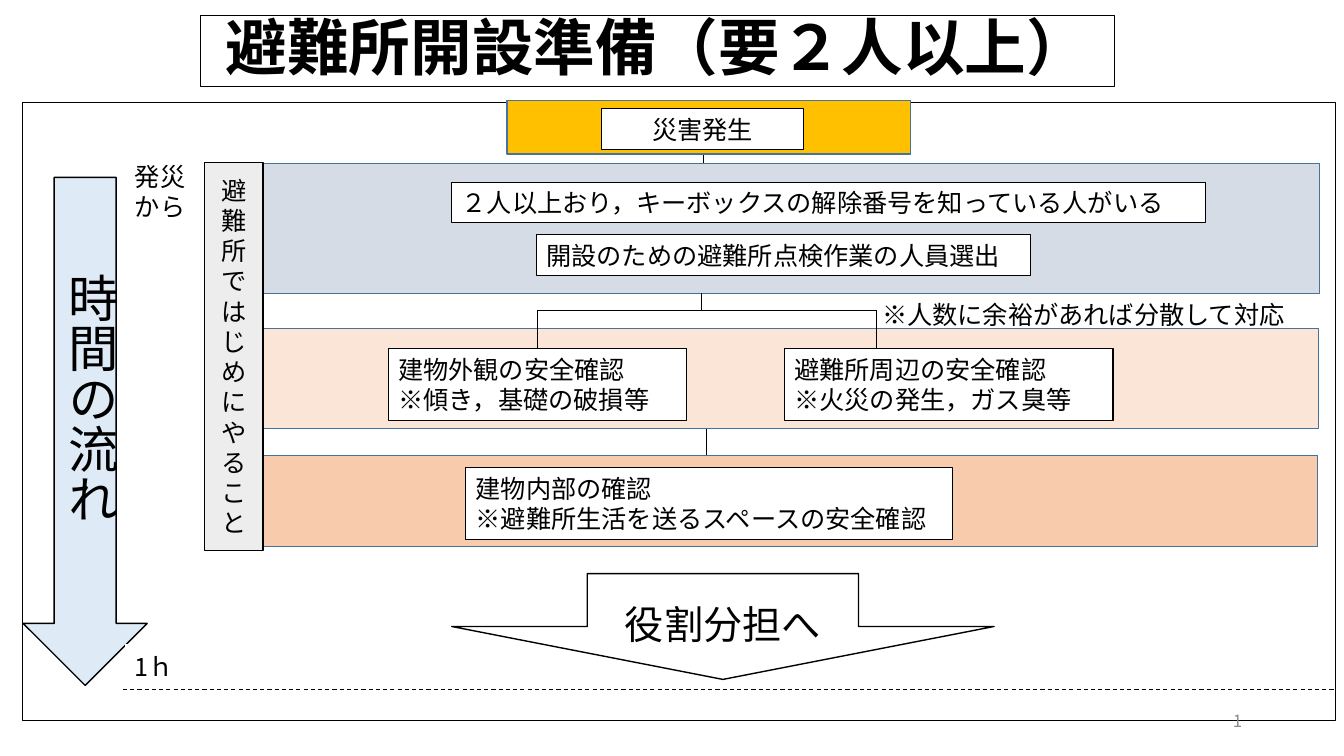
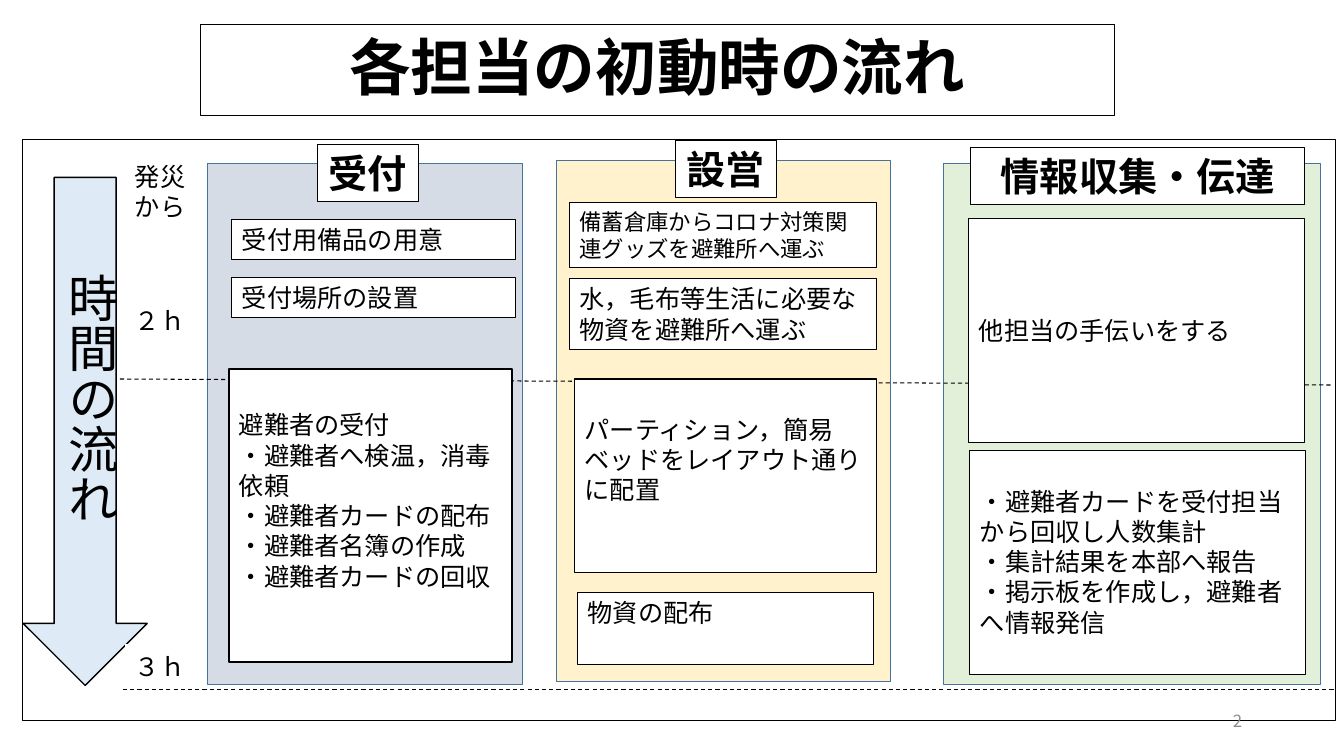
from copy import deepcopy
from lxml import etree
from pptx import Presentation
from pptx.dml.color import RGBColor
from pptx.enum import dml, shapes, text
from pptx.oxml.ns import qn
from pptx.util import Inches, Pt

FONT = "Noto Sans CJK JP"
COLORS = {
    "black": "000000", "white": "FFFFFF", "edge": "43739E", "number": "8C8C8C",
    "sky": "DEEBF7", "blue": "D6DCE5", "peach": "FBE5D6", "orange": "F8CBAD",
    "amber": "FFC000", "gray": "EDEDED", "green": "E2F0D9", "yellow": "FFF2CC",
}
RECT = shapes.MSO_SHAPE.RECTANGLE
ARROW = shapes.MSO_SHAPE.DOWN_ARROW
TOP = text.MSO_ANCHOR.TOP
MIDDLE = text.MSO_ANCHOR.MIDDLE
LEFT = text.PP_ALIGN.LEFT
CENTER = text.PP_ALIGN.CENTER


def rgb(name):
    return RGBColor.from_string(COLORS[name])


def apply(obj, values):
    for name, value in values.items():
        setattr(obj, name, value)


def place(sp, at):
    apply(sp, dict(zip(("left", "top", "width", "height"), map(Inches, at))))


def paint(sp, fill, line, weight):
    if fill:
        sp.fill.solid()
        sp.fill.fore_color.rgb = rgb(fill)
    else:
        sp.fill.background()
    if line:
        sp.line.color.rgb = rgb(line)
        sp.line.width = Pt(weight)
    else:
        sp.line.fill.background()


def write(sp, content, size=18, bold=False, align=LEFT, **frame):
    tf = sp.text_frame
    apply(tf, {"word_wrap": True, "auto_size": text.MSO_AUTO_SIZE.NONE,
               "vertical_anchor": MIDDLE, **frame})
    for i, words in enumerate(content.split("\n")):
        p = tf.add_paragraph() if i else tf.paragraphs[0]
        p.alignment = align
        r = p.add_run()
        r.text = words
        apply(r.font, {"name": FONT, "size": Pt(size), "bold": bold})
        r.font.color.rgb = rgb("black")
        etree.SubElement(r.font._element, qn("a:ea"), typeface=FONT)


def add_box(s, at, content="", fill="white", line="black", weight=0.75, kind=RECT, **style):
    sp = s.shapes.add_shape(kind, *map(Inches, at))
    sp.shadow.inherit = False
    paint(sp, fill, line, weight)
    if content:
        write(sp, content, **style)
    return sp


def add_panel(s, at, fill):
    return add_box(s, at, fill=fill, line="edge", weight=1)


def add_text(s, at, content, **style):
    sp = s.shapes.add_textbox(*map(Inches, at))
    write(sp, content, vertical_anchor=TOP, **style)
    return sp


def add_line(s, x1, y1, x2, y2, weight=0.5, dashed=False):
    line = s.shapes.add_connector(shapes.MSO_CONNECTOR.STRAIGHT,
                                  *map(Inches, (x1, y1, x2, y2)))
    line.line.color.rgb = rgb("black")
    line.line.width = Pt(weight)
    if dashed:
        line.line.dash_style = dml.MSO_LINE.DASH
    etree.SubElement(line._element.spPr, qn("a:effectLst"))
    return line


def add_time_line(s, y1, y2, x1=1.22, x2=13.24):
    add_line(s, x1, y1, x2, y2, weight=0.75, dashed=True)


def add_time_label(s, y, content):
    add_box(s, (1.24, y, 0.8, 0.44), content, line=None)


def add_number(s):
    kind = shapes.PP_PLACEHOLDER.SLIDE_NUMBER
    source = next(sp for sp in s.slide_layout.placeholders
                  if sp.placeholder_format.type == kind)
    s.shapes._spTree.append(deepcopy(source._element))
    sp = s.shapes[-1]
    place(sp, (9.42, 6.95, 3, 0.4))
    sp.text_frame.vertical_anchor = MIDDLE
    p = sp.text_frame.paragraphs[0]
    p.alignment = text.PP_ALIGN.RIGHT
    rpr = p._p.find(qn("a:fld")).find(qn("a:rPr"))
    rpr.set("sz", "1200")
    fill = etree.SubElement(rpr, qn("a:solidFill"))
    etree.SubElement(fill, qn("a:srgbClr"), val=COLORS["number"])
    for tag in ("a:latin", "a:ea"):
        etree.SubElement(rpr, qn(tag), typeface=FONT)


def add_slide(prs, title, title_top, title_height, frame_top, end_label):
    s = prs.slides.add_slide(prs.slide_layouts[5])
    sp = s.shapes.title
    place(sp, (1.99, title_top, 9.06, title_height))
    paint(sp, None, "black", 0.75)
    write(sp, title, size=44, bold=True, align=CENTER)
    sp.text_frame.paragraphs[0].line_spacing = 0.9
    add_box(s, (0.22, frame_top, 13.03, 7.15 - frame_top))
    add_number(s)
    add_box(s, (0.23, 1.76, 1.23, 5.04), fill="sky", weight=1, kind=ARROW)
    flow = add_text(s, (0.45, 2.61, 0.81, 2.8), "時間の流れ", size=36, align=CENTER)
    flow.text_frame._txBody.bodyPr.set("vert", "eaVert")
    add_time_label(s, 1.68, "発災\nから")
    add_time_label(s, 6.39, end_label)
    add_time_line(s, 6.84, 6.84)
    return s


def build_preparation(prs):
    s = add_slide(prs, "避難所開設準備（要２人以上）", 0.15, 0.71, 1.02, "1ｈ")
    add_line(s, 6.98, 1.25, 6.98, 1.71)
    add_line(s, 7.01, 4.06, 7.01, 4.52)
    for top, width, height, fill in ((3.26, 10.49, 0.99, "peach"),
                                     (1.62, 10.5, 1.29, "blue"),
                                     (4.52, 10.48, 0.9, "orange")):
        add_panel(s, (2.59, top, width, height), fill)

    add_box(s, (4.48, 1.81, 7.48, 0.4), "２人以上おり，キーボックスの解除番号を知っている人がいる")
    add_box(s, (5.32, 2.33, 4.9, 0.4), "開設のための避難所点検作業の人員選出")
    outside = add_box(s, (3.85, 3.46, 2.96, 0.71), "建物外観の安全確認\n※傾き，基礎の破損等")
    add_box(s, (7.78, 3.46, 3.26, 0.71), "避難所周辺の安全確認\n※火災の発生，ガス臭等")
    add_box(s, (4.62, 4.64, 4.83, 0.71), "建物内部の確認\n※避難所生活を送るスペースの安全確認")

    add_line(s, 6.96, 2.91, 6.96, 3.08)
    add_line(s, 5.33, 3.08, 8.69, 3.08)
    add_line(s, 5.33, 3.08, 5.33, 3.46).end_connect(outside, 0)
    add_line(s, 8.69, 3.08, 8.69, 3.46)
    add_text(s, (8.65, 2.92, 4.46, 0.4), "※人数に余裕があれば分散して対応")

    add_panel(s, (5.03, 1, 4, 0.53), "amber")
    add_box(s, (5.97, 1.08, 2, 0.4), "災害発生", align=CENTER)
    add_box(s, (2.03, 1.61, 0.58, 3.85), "避難所ではじめにやること",
            fill="gray", weight=1, align=CENTER)
    add_box(s, (4.48, 5.69, 5.38, 1.05), weight=1, kind=ARROW)
    add_text(s, (6.1, 5.91, 2.49, 0.57), "役割分担へ", size=28)


def build_roles(prs):
    s = add_slide(prs, "各担当の初動時の流れ", 0.24, 0.91, 1.38, "３ｈ")
    add_time_label(s, 2.96, "２ｈ")
    roles = (
        ("受付", (2.06, 1.62, 3.12, 5.17), "blue", (3.15, 1.43, 1, 0.57)),
        ("設営", (5.52, 1.59, 3.31, 5.17), "yellow", (6.7, 1.39, 1, 0.57)),
        ("情報収集・伝達", (9.36, 1.62, 3.74, 5.17), "green", (9.63, 1.46, 3.31, 0.57)),
    )
    for name, panel, fill, header in roles:
        add_panel(s, panel, fill)
        add_box(s, header, name, size=28, bold=True, align=CENTER)
    add_time_line(s, 3.76, 3.82, 1.19, 13.21)

    lowered = {"vertical_anchor": TOP, "margin_top": Inches(0.35)}
    tasks = (
        ((2.3, 2.18, 2.81, 0.4), "受付用備品の用意", {}),
        ((2.3, 2.75, 2.81, 0.4), "受付場所の設置", {}),
        ((2.27, 3.66, 2.81, 2.91),
         "避難者の受付\n・避難者へ検温，消毒依頼\n・避難者カードの配布\n"
         "・避難者名簿の作成\n・避難者カードの回収",
         {"weight": 1, "margin_bottom": Inches(0.35)}),
        ((5.65, 2.01, 3.04, 0.64), "備蓄倉庫からコロナ対策関連グッズを避難所へ運ぶ", {"size": 16}),
        ((5.65, 2.76, 3.04, 0.71), "水，毛布等生活に必要な物資を避難所へ運ぶ", {}),
        ((5.7, 3.76, 2.99, 1.92), "パーティション，簡易ベッドをレイアウト通りに配置", lowered),
        ((5.73, 5.88, 2.93, 0.71), "物資の配布", {"vertical_anchor": TOP}),
        ((9.61, 2.17, 3.33, 2.22), "他担当の手伝いをする", {}),
        ((9.62, 4.47, 3.33, 2.22),
         "・避難者カードを受付担当から回収し人数集計\n・集計結果を本部へ報告\n"
         "・掲示板を作成し，避難者へ情報発信", lowered),
    )
    for at, content, style in tasks:
        add_box(s, at, content, **style)


def main():
    prs = Presentation()
    apply(prs, {"slide_width": Inches(13.33), "slide_height": Inches(7.5)})
    build_preparation(prs)
    build_roles(prs)
    prs.save("out.pptx")


if __name__ == "__main__":
    main()
